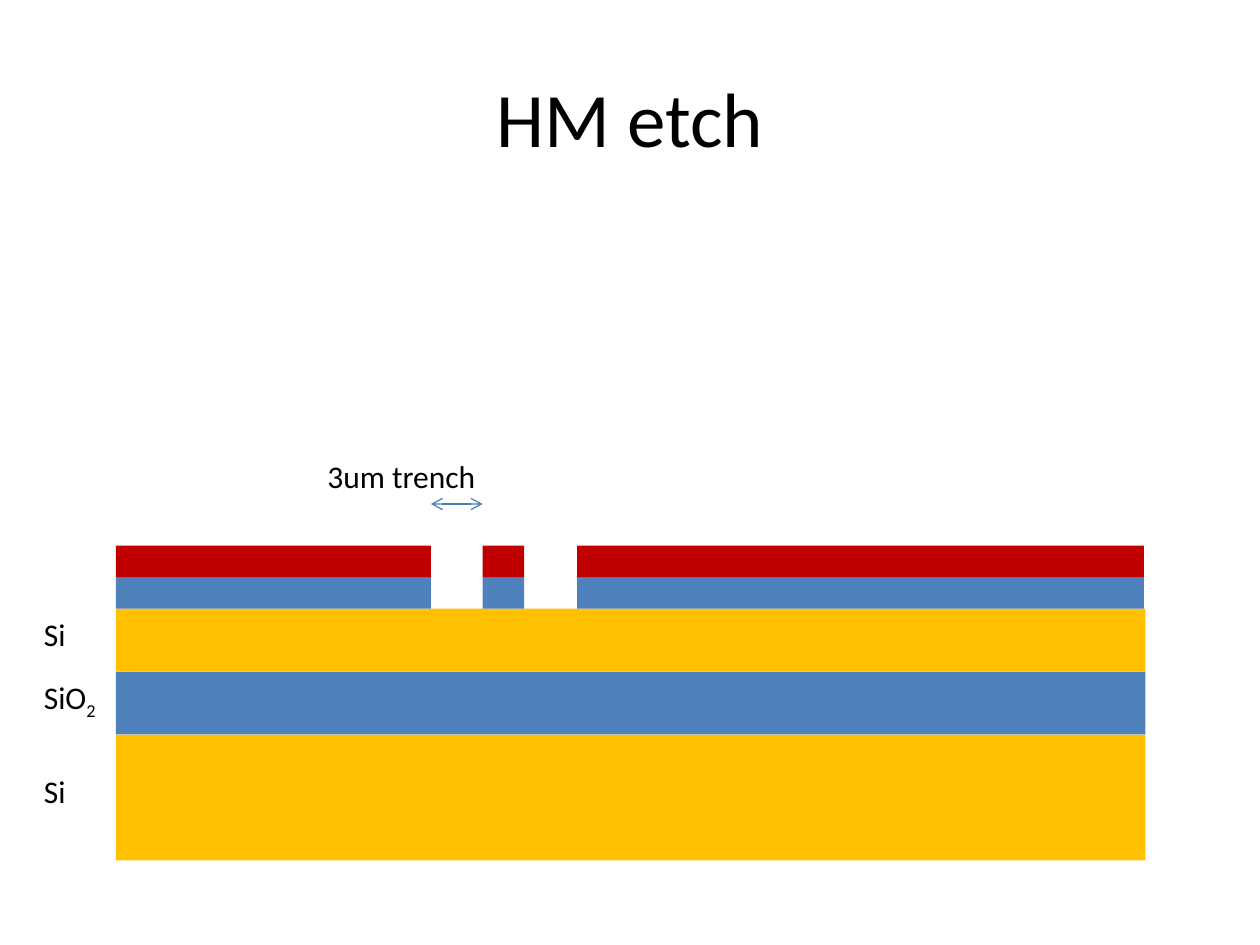
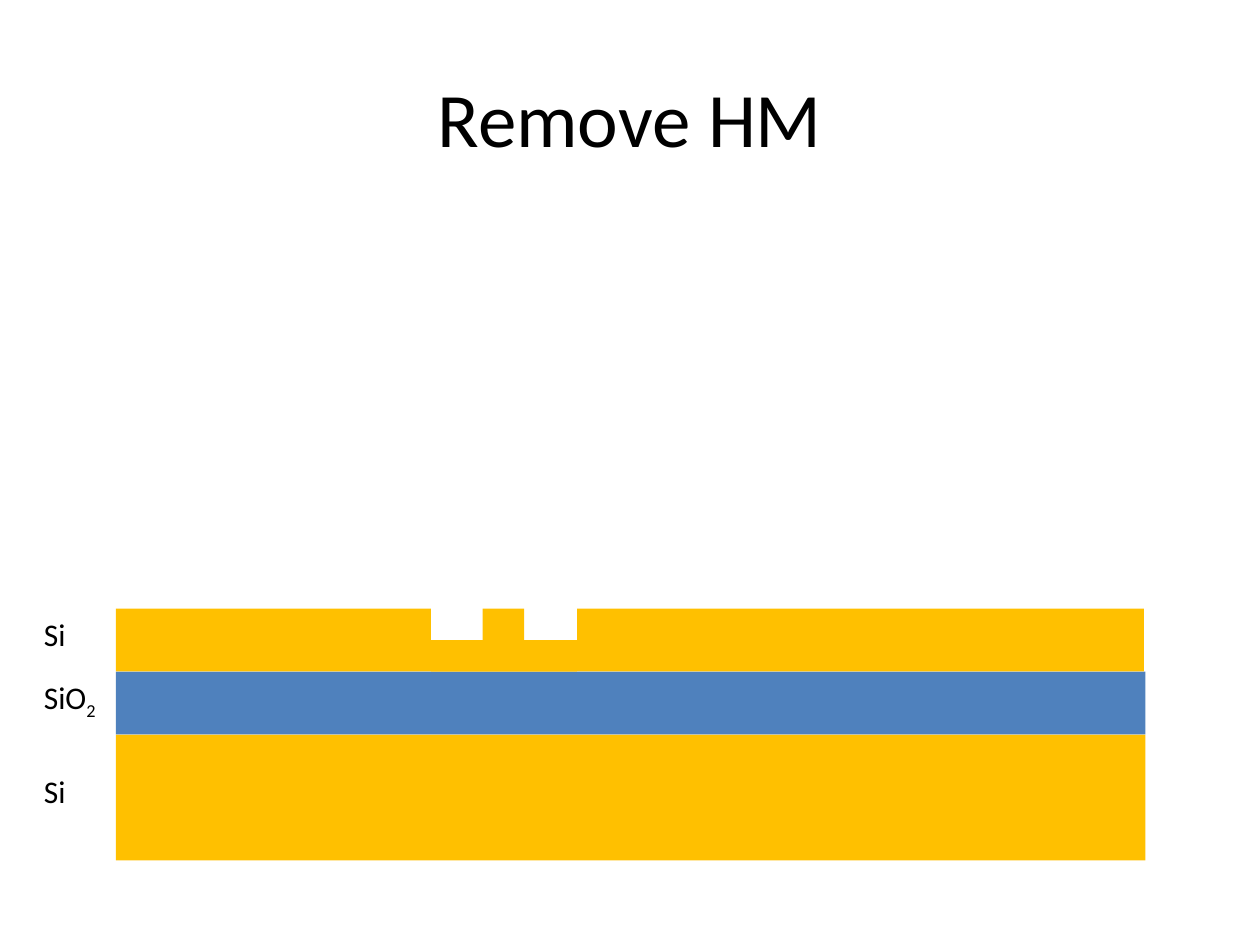
import pptx
import pptx.util
import pptx.dml.color
import pptx.enum.shapes
import pptx.enum.text
import pptx.oxml.ns
import lxml.etree

Inches = pptx.util.Inches
Pt = pptx.util.Pt
RGBColor = pptx.dml.color.RGBColor

SILICON = RGBColor(0xFF, 0xC0, 0x00)
OXIDE = RGBColor(0x4F, 0x81, 0xBD)
RESIST = RGBColor(0xC0, 0x00, 0x00)
ARROW = RGBColor(0x4B, 0x7E, 0xBC)
BLACK = RGBColor(0x00, 0x00, 0x00)
FONT = "Calibri"

WAFER_LEFT, WAFER_WIDTH = 0.92, 8.17
SURFACE = 4.83
DEVICE_HEIGHT, BURIED_HEIGHT, HANDLE_HEIGHT = 0.5, 0.5, 1
FILM_HEIGHT = 0.25
LABEL_WIDTH, LABEL_HEIGHT = 0.67, 0.42

LEFT_FIELD = (0, 2.5)
RIDGE = (2.91, 0.33)
RIGHT_FIELD = (3.66, 4.5)
TRENCH_WIDTH = RIDGE[0] - LEFT_FIELD[1]


def style_text(para, size):
    para.font.name = FONT
    para.font.size = Pt(size)
    para.font.color.rgb = BLACK


def add_page(deck, title):
    page = deck.slides.add_slide(deck.slide_layouts[5])
    box = page.shapes.title
    box.left, box.top = Inches(0.5), Inches(0.3)
    box.width, box.height = Inches(9), Inches(1.25)
    box.text_frame.text = title
    box.text_frame.vertical_anchor = pptx.enum.text.MSO_ANCHOR.MIDDLE
    para = box.text_frame.paragraphs[0]
    para.alignment = pptx.enum.text.PP_ALIGN.CENTER
    style_text(para, 44)
    return page


def add_layer(page, left, top, width, height, color):
    layer = page.shapes.add_shape(
        pptx.enum.shapes.MSO_SHAPE.RECTANGLE,
        Inches(left), Inches(top), Inches(width), Inches(height))
    layer.shadow.inherit = False
    layer.fill.solid()
    layer.fill.fore_color.rgb = color
    layer.line.fill.background()


def add_label(page, left, top, width, height, text, subscript=""):
    box = page.shapes.add_textbox(
        Inches(left), Inches(top), Inches(width), Inches(height))
    box.text_frame.word_wrap = True
    para = box.text_frame.paragraphs[0]
    style_text(para, 18)
    para.add_run().text = text
    if subscript:
        span = para.add_run()
        span.text = subscript
        span._r.get_or_add_rPr().set("baseline", "-25000")


def add_double_arrow(page, left, top, width):
    arrow = page.shapes.add_connector(
        pptx.enum.shapes.MSO_CONNECTOR.STRAIGHT,
        Inches(left), Inches(top), Inches(left + width), Inches(top))
    arrow.line.color.rgb = ARROW
    arrow.line.width = Pt(0.75)
    outline = arrow.line._get_or_add_ln()
    for end in ("a:headEnd", "a:tailEnd"):
        lxml.etree.SubElement(outline, pptx.oxml.ns.qn(end), type="arrow")
    lxml.etree.SubElement(arrow._element.spPr, pptx.oxml.ns.qn("a:effectLst"))


def draw_substrate(page, left, surface, width):
    buried_top = surface + DEVICE_HEIGHT
    handle_top = buried_top + BURIED_HEIGHT
    add_layer(page, left, handle_top, width, HANDLE_HEIGHT, SILICON)
    add_layer(page, left, buried_top, width, BURIED_HEIGHT, OXIDE)
    labels = [(surface, "Si", ""), (buried_top, "SiO", "2"),
              (handle_top + 0.25, "Si", "")]
    for top, text, subscript in labels:
        add_label(page, left - LABEL_WIDTH, top, LABEL_WIDTH, LABEL_HEIGHT,
                  text, subscript)


def draw_hard_mask(page, left, surface, width):
    add_layer(page, left, surface, width, DEVICE_HEIGHT, SILICON)
    for level, color in enumerate((OXIDE, RESIST), start=1):
        for offset, span_width in (LEFT_FIELD, RIDGE, RIGHT_FIELD):
            add_layer(page, left + offset, surface - level * FILM_HEIGHT,
                      span_width, FILM_HEIGHT, color)
    add_double_arrow(page, left + LEFT_FIELD[1], surface - 0.83, TRENCH_WIDTH)
    add_label(page, left + 1.58, surface - 1.25, 1.5, 0.4, "3um trench")


def draw_etched_device(page, left, surface, width):
    for offset, span_width in (LEFT_FIELD, RIGHT_FIELD):
        add_layer(page, left + offset, surface, span_width, DEVICE_HEIGHT, SILICON)
    add_layer(page, left + RIDGE[0], surface, RIDGE[1], FILM_HEIGHT, SILICON)
    floor_left = LEFT_FIELD[1]
    add_layer(page, left + floor_left, surface + FILM_HEIGHT,
              RIGHT_FIELD[0] - floor_left, FILM_HEIGHT, SILICON)


def main():
    deck = pptx.Presentation()
    deck.slide_width, deck.slide_height = Inches(10), Inches(7.5)
    for title, draw_top in (("HM etch", draw_hard_mask),
                            ("Remove HM", draw_etched_device)):
        page = add_page(deck, title)
        for draw in (draw_substrate, draw_top):
            draw(page, WAFER_LEFT, SURFACE, WAFER_WIDTH)
    deck.save("out.pptx")


if __name__ == "__main__":
    main()
